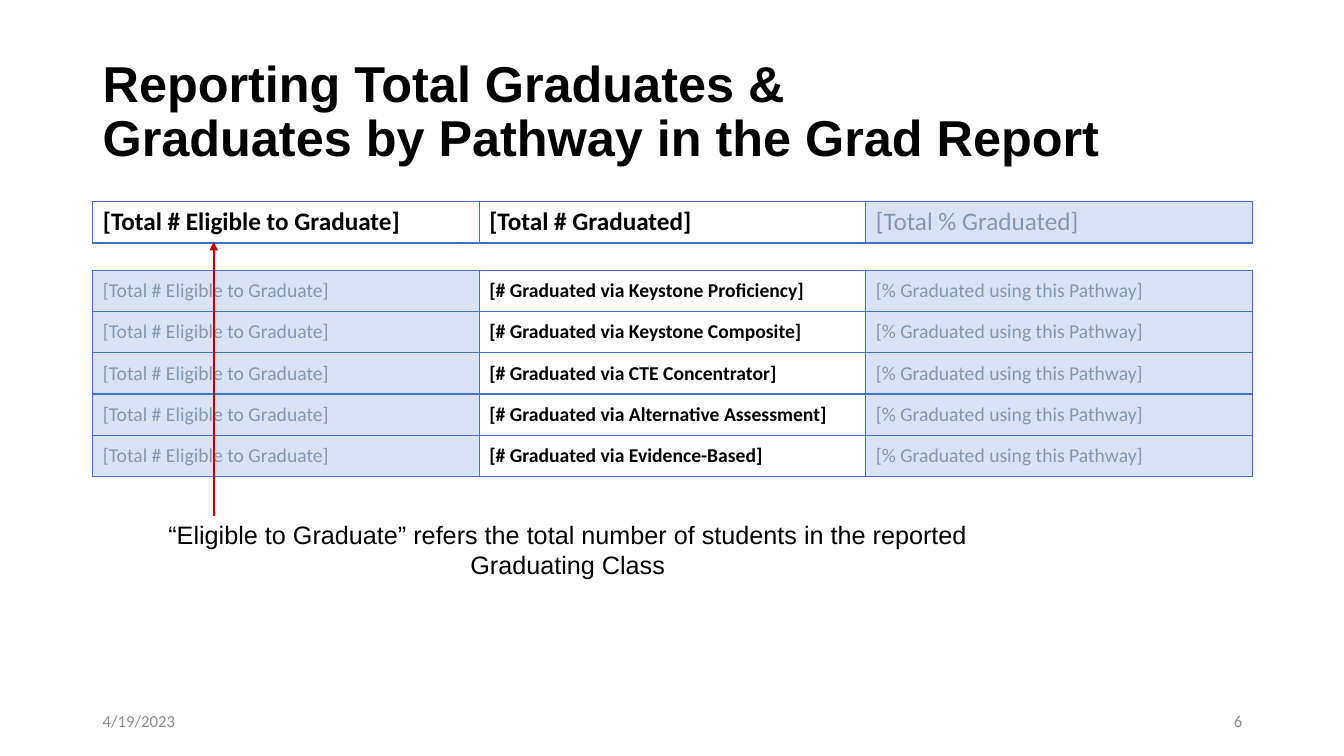
import pptx
import pptx.dml.color
import pptx.enum.shapes
import pptx.enum.text
import pptx.oxml
import pptx.oxml.ns
import pptx.util

RGB = pptx.dml.color.RGBColor
ALIGN = pptx.enum.text.PP_ALIGN
ANCHOR = pptx.enum.text.MSO_ANCHOR
BLACK = RGB(0x00, 0x00, 0x00)
WHITE = RGB(0xFF, 0xFF, 0xFF)
BLUE = RGB(0x44, 0x72, 0xC4)
PALE = RGB(0xDA, 0xE3, 0xF3)
SLATE = RGB(0x84, 0x97, 0xB0)
GRAY = RGB(0x8C, 0x8C, 0x8C)
RED = RGB(0xC0, 0x00, 0x00)

ROW = 41
COLS = 3
LEFT, WIDTH = 92, 1150
PATHS = ["Keystone Proficiency", "Keystone Composite", "CTE Concentrator",
         "Alternative Assessment", "Evidence-Based"]


def px(count):
    """Turn px, a hundred to the inch, into EMU."""
    return pptx.util.Emu(count * 9144)


def write(para, text, size, color, bold=False, face="Calibri"):
    """Add one styled run to a paragraph."""
    run = para.add_run()
    run.text = text
    font = run.font
    font.name, font.size, font.bold = face, pptx.util.Pt(size), bold
    font.color.rgb = color


def add_box(slide, box, anchor, align=ALIGN.LEFT, pad=10):
    """Place an empty text box and return its paragraph."""
    frame = slide.shapes.add_textbox(*map(px, box)).text_frame
    frame.word_wrap = True
    frame.vertical_anchor = anchor
    frame.margin_left = frame.margin_right = px(pad)
    para = frame.paragraphs[0]
    para.alignment = align
    return para


def add_title(slide, box):
    """Place the two-line title."""
    para = add_box(slide, box, ANCHOR.MIDDLE)
    para.line_spacing = 0.9
    write(para, "Reporting Total Graduates &", 36, BLACK, True, "Arial")
    para.add_line_break()
    write(para, "Graduates by Pathway in the Grad Report", 36, BLACK, True, "Arial")


def edge(cell):
    """Draw a thin blue border on all four sides of a cell."""
    props = cell._tc.get_or_add_tcPr()
    for side in ("lnL", "lnR", "lnT", "lnB"):
        props.append(pptx.oxml.parse_xml(
            f'<a:{side} {pptx.oxml.ns.nsdecls("a")} w="12700"><a:solidFill>'
            f'<a:srgbClr val="{BLUE}"/></a:solidFill></a:{side}>'))


def add_grid(slide, box, rows, size, anchor, strong):
    """Place a table whose strong columns are bold on white."""
    left, top, width = box
    shape = slide.shapes.add_table(
        len(rows), COLS, px(left), px(top), px(width), px(ROW * len(rows)))
    table = shape.table
    table.first_row = table.horz_banding = False
    for col in table.columns:
        col.width = px(width) // COLS
    for r, texts in enumerate(rows):
        table.rows[r].height = px(ROW)
        for c, text in enumerate(texts):
            cell = table.cell(r, c)
            bold = c in strong
            edge(cell)
            cell.fill.solid()
            cell.fill.fore_color.rgb = WHITE if bold else PALE
            cell.vertical_anchor = anchor
            write(cell.text_frame.paragraphs[0], text, size,
                  BLACK if bold else SLATE, bold)


def add_note(slide, box, tip):
    """Place the note and the arrow that rises from it to the tip."""
    left, top, width, height = box
    para = add_box(slide, box, ANCHOR.TOP, ALIGN.CENTER, 16)
    write(para, "“Eligible to Graduate” refers the total number of students "
          "in the reported Graduating Class", 18, BLACK, face="Arial")
    x = left + 120
    line = slide.shapes.add_connector(
        pptx.enum.shapes.MSO_CONNECTOR.STRAIGHT, px(x), px(top + 2), px(x), px(tip))
    line.line.color.rgb = RED
    line.line.width = pptx.util.Pt(1.5)
    space = pptx.oxml.ns.nsdecls("a")
    line.line._get_or_add_ln().append(
        pptx.oxml.parse_xml(f'<a:tailEnd {space} type="triangle"/>'))
    line._element.spPr.append(pptx.oxml.parse_xml(f'<a:effectLst {space}/>'))


def add_foot(slide, box):
    """Place the date at the left and the page number at the right."""
    left, top, width, height = box
    part = 300
    date = add_box(slide, (left, top, part, height), ANCHOR.MIDDLE)
    write(date, "4/19/2023", 12, GRAY)
    page = add_box(slide, (left + width - part, top, part, height),
                   ANCHOR.MIDDLE, ALIGN.RIGHT)
    write(page, "6", 12, GRAY)


def main():
    """Build the slide and save it."""
    deck = pptx.Presentation()
    deck.slide_width, deck.slide_height = px(1333), px(750)
    slide = deck.slides.add_slide(deck.slide_layouts[6])
    add_title(slide, (LEFT, 40, WIDTH, 145))
    total = ["[Total # Eligible to Graduate]", "[Total # Graduated]",
             "[Total % Graduated]"]
    add_grid(slide, (LEFT, 200, WIDTH), [total], 18, ANCHOR.TOP, (0, 1))
    rows = [[total[0], f"[# Graduated via {name}]",
             "[% Graduated using this Pathway]"] for name in PATHS]
    add_grid(slide, (LEFT, 268, WIDTH), rows, 14, ANCHOR.MIDDLE, (1,))
    add_note(slide, (LEFT, 510, 942, 70), 240)
    add_foot(slide, (LEFT, 695, WIDTH, 40))
    deck.save("out.pptx")


if __name__ == "__main__":
    main()
